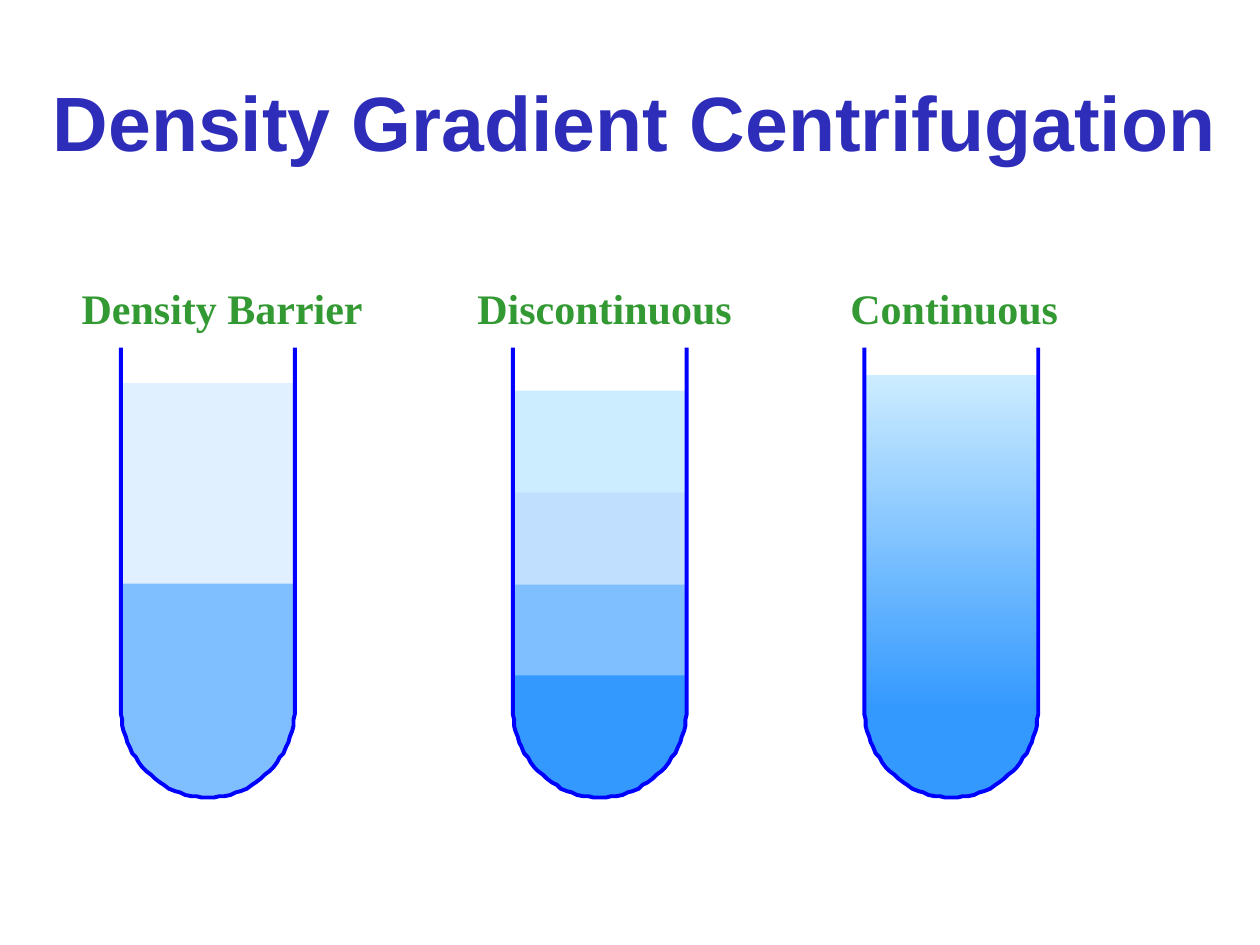
from dataclasses import dataclass
from math import cos, pi, sin

from pptx import Presentation
from pptx.dml.color import RGBColor
from pptx.enum.shapes import MSO_SHAPE
from pptx.enum.text import MSO_ANCHOR, MSO_AUTO_SIZE, PP_ALIGN
from pptx.util import Pt

PX = 9144  # EMU in one px, 100 px to the inch


@dataclass(frozen=True)
class Theme:
    title_color: str = "2D2DB9"
    title_font: str = "Arial"
    title_size: int = 44
    label_color: str = "339933"
    label_font: str = "Times New Roman"
    label_size: int = 24
    glass: str = "0000FF"
    glass_width: float = 2.25
    light: str = "E1F0FF"
    ice: str = "CCECFF"
    pale: str = "C0DFFF"
    medium: str = "7FBFFF"
    deep: str = "3399FF"


theme = Theme()


def style_text(frame, text, font, size, color):
    frame.text = text
    span = frame.paragraphs[0].runs[0]
    span.font.name = font
    span.font.size = Pt(size)
    span.font.bold = True
    span.font.color.rgb = RGBColor.from_string(color)


def half_ellipse(center_x, center_y, radius_x, radius_y, steps=48):
    """Return points along the lower half, from left to right."""
    angles = [pi - pi * step / steps for step in range(steps + 1)]
    return [(center_x + radius_x * cos(a), center_y + radius_y * sin(a)) for a in angles]


deck = Presentation()
deck.slide_width, deck.slide_height = 1000 * PX, 750 * PX
page = deck.slides.add_slide(deck.slide_layouts[5])

title = page.shapes.title
title.left, title.top, title.width, title.height = 25 * PX, 58 * PX, 958 * PX, 75 * PX
style_text(title.text_frame, "Density Gradient Centrifugation",
           theme.title_font, theme.title_size, theme.title_color)
title.text_frame.auto_size = MSO_AUTO_SIZE.NONE
title.text_frame.vertical_anchor = MSO_ANCHOR.MIDDLE
title.text_frame.paragraphs[0].alignment = PP_ALIGN.CENTER

TUBE_WIDTH, RIM, SHOULDER, BOTTOM = 138, 276, 562, 633

# label, label left, label width, tube left, bowl colour, layers (top, bottom, colours)
tubes = [
    ("Density Barrier", 55, 243, 96, theme.medium, [
        (463, 552, [theme.medium]),
        (304, 463, [theme.light]),
        (536, 565, [theme.medium])]),
    ("Discontinuous", 369, 222, 407, theme.deep, [
        (463, 552, [theme.medium]),
        (387, 464, [theme.pale]),
        (536, 565, [theme.deep]),
        (310, 391, [theme.ice])]),
    ("Continuous", 665, 185, 686, theme.deep, [
        (298, 564, [theme.ice, theme.deep])]),
]

for label, label_left, label_width, left, bowl_color, layers in tubes:
    group = page.shapes.add_group_shape().shapes
    center = left + TUBE_WIDTH / 2

    bowl_points = half_ellipse(center, SHOULDER, 68, BOTTOM - SHOULDER)
    builder = group.build_freeform(*bowl_points[0], scale=PX)
    builder.add_line_segments(bowl_points[1:], close=True)
    bowl = builder.convert_to_shape()
    bowl.shadow.inherit = False
    bowl.fill.solid()
    bowl.fill.fore_color.rgb = RGBColor.from_string(bowl_color)
    bowl.line.fill.background()

    for top, bottom, colors in layers:
        layer = group.add_shape(MSO_SHAPE.RECTANGLE, left * PX, top * PX,
                                TUBE_WIDTH * PX, (bottom - top) * PX)
        layer.shadow.inherit = False
        layer.line.fill.background()
        if len(colors) == 1:
            layer.fill.solid()
            layer.fill.fore_color.rgb = RGBColor.from_string(colors[0])
        else:
            layer.fill.gradient()
            layer.fill.gradient_angle = 270
            for stop, color in zip(layer.fill.gradient_stops, colors):
                stop.color.rgb = RGBColor.from_string(color)

    curve = half_ellipse(center, SHOULDER, TUBE_WIDTH / 2, BOTTOM - SHOULDER)
    builder = group.build_freeform(left, RIM, scale=PX)
    builder.add_line_segments(curve + [(left + TUBE_WIDTH, RIM)], close=False)
    glass = builder.convert_to_shape()
    glass.shadow.inherit = False
    glass.fill.background()
    glass.line.color.rgb = RGBColor.from_string(theme.glass)
    glass.line.width = Pt(theme.glass_width)

    box = group.add_textbox(label_left * PX, 219 * PX, label_width * PX, 50 * PX)
    box.text_frame.word_wrap = False
    box.text_frame.auto_size = MSO_AUTO_SIZE.SHAPE_TO_FIT_TEXT
    style_text(box.text_frame, label, theme.label_font, theme.label_size, theme.label_color)

deck.save("out.pptx")
